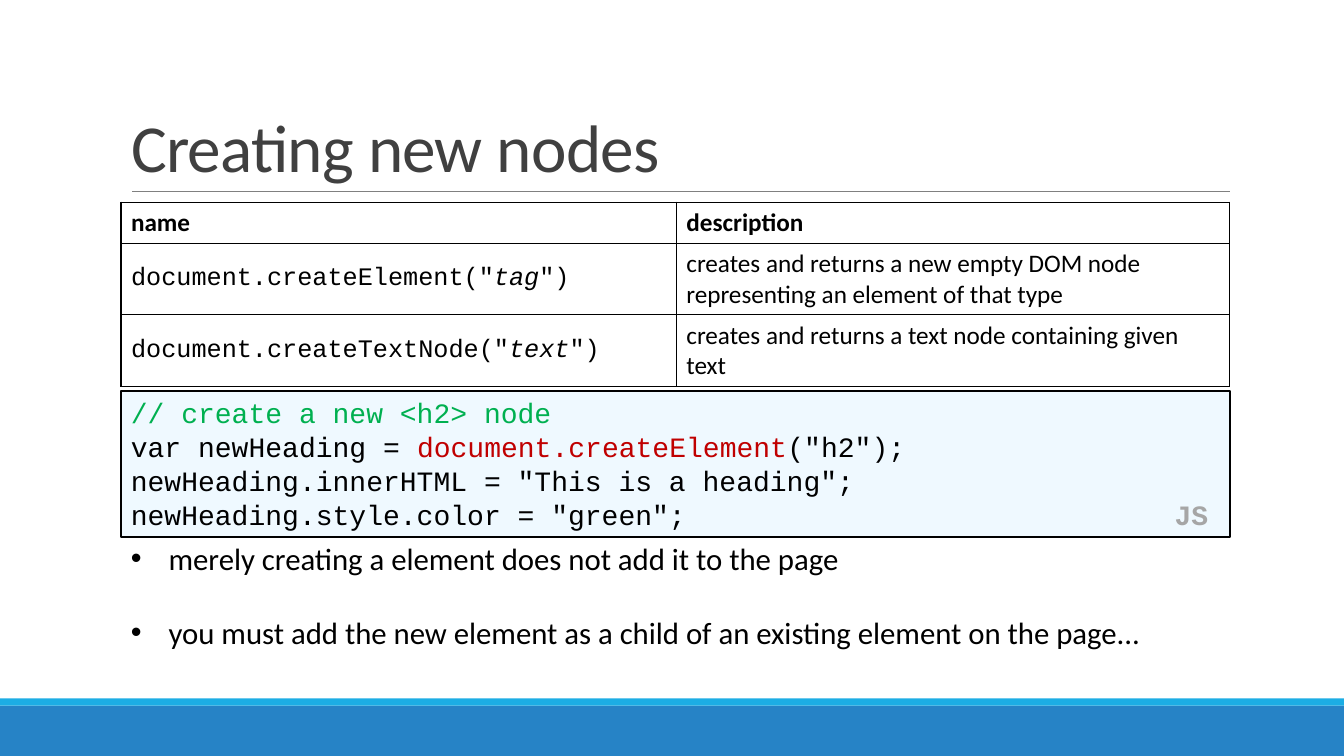
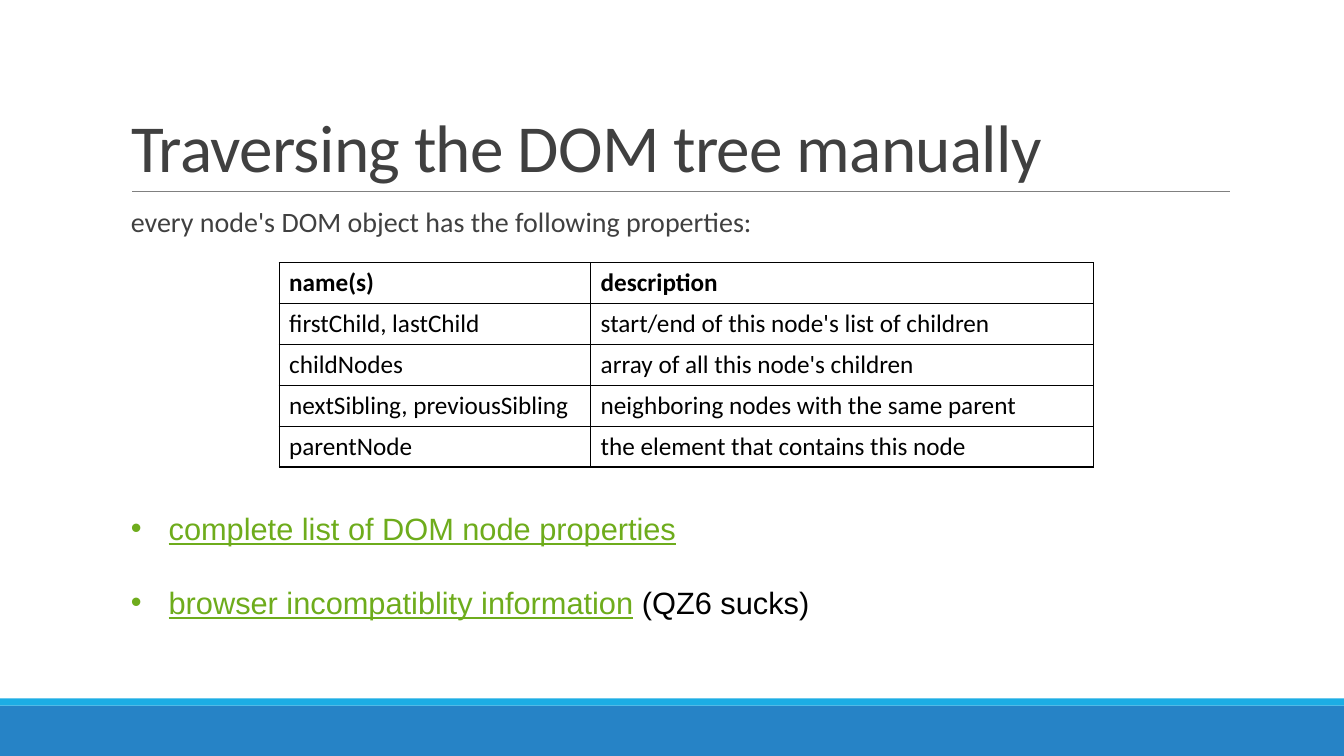
from lxml import etree
from pptx import Presentation
from pptx.dml.color import RGBColor
from pptx.enum.shapes import MSO_CONNECTOR as Connector, MSO_SHAPE as Shape
from pptx.enum.text import MSO_ANCHOR as Anchor, PP_ALIGN as Align
from pptx.oxml.ns import qn
from pptx.util import Pt

COLORS = {
    "band": "2683C6", "stripe": "1CADE4", "rule": "808080", "title": "404040",
    "ink": "000000", "code_fill": "EFF9FF", "comment": "00B050",
    "call": "C00000", "tag": "A6A6A6", "link": "6EAC1C",
}
SANS, MONO, ARIAL = "Calibri", "Courier New", "Arial"
SLIDE_W, SLIDE_H = 960, 540
LEFT, WIDTH = 86.4, 792
BAND_TOP, STRIPE_TOP, RULE_Y = 504, 498.8, 136.8

LINK = {"color": "link", "underline": True}
ITALIC = {"italic": True}

CREATE_TITLE = "Creating new nodes"
CREATE_ROWS = [
    ["name", "description"],
    [[("document.createElement(\"", {}), ("tag", ITALIC), ("\")", {})],
     "creates and returns a new empty DOM node representing an element of that type"],
    [[("document.createTextNode(\"", {}), ("text", ITALIC), ("\")", {})],
     "creates and returns a text node containing given text"],
]
CODE = [
    [("// create a new <h2> node", {"color": "comment"})],
    [("var newHeading = ", {}), ("document.createElement", {"color": "call"}),
     ("(\"h2\");", {})],
    "newHeading.innerHTML = \"This is a heading\";",
    [("newHeading.style.color = \"green\";\t", {}),
     ("JS", {"color": "tag", "bold": True})],
]
CREATE_NOTES = [
    "merely creating a element does not add it to the page",
    "you must add the new element as a child of an existing element on the page...",
]

TRAVERSE_TITLE = "Traversing the DOM tree manually"
TRAVERSE_LEAD = "every node's DOM object has the following properties:"
TRAVERSE_ROWS = [
    ["name(s)", "description"],
    ["firstChild, lastChild", "start/end of this node's list of children"],
    ["childNodes", "array of all this node's children"],
    ["nextSibling, previousSibling", "neighboring nodes with the same parent"],
    ["parentNode", "the element that contains this node"],
]
TRAVERSE_LINKS = [
    [("complete list of DOM node properties", LINK)],
    [("browser incompatiblity information", LINK), (" (QZ6 sucks)", {})],
]


def rgb(name):
    return RGBColor.from_string(COLORS[name])


def write(paragraph, content, *, size, font=SANS, color="ink", bold=False,
          spacing=None, line=None, before=0):
    paragraph.alignment = Align.LEFT
    paragraph.space_before = Pt(before)
    if line:
        paragraph.line_spacing = line
    runs = [(content, {})] if isinstance(content, str) else content
    for text, look in runs:
        run = paragraph.add_run()
        run.text = text
        run.font.name = font
        run.font.size = Pt(size)
        run.font.bold = look.get("bold", bold)
        run.font.italic = look.get("italic", False)
        run.font.underline = look.get("underline", False)
        run.font.color.rgb = rgb(look.get("color", color))
        if spacing is not None:
            run.font._element.set("spc", str(spacing))


def paragraphs(frame, count):
    for _ in range(count - 1):
        frame.add_paragraph()
    return frame.paragraphs


def add_rect(slide, left, top, width, height, fill):
    rect = slide.shapes.add_shape(
        Shape.RECTANGLE, Pt(left), Pt(top), Pt(width), Pt(height))
    rect.shadow.inherit = False
    rect.fill.solid()
    rect.fill.fore_color.rgb = rgb(fill)
    rect.line.fill.background()
    return rect


def add_text_frame(slide, top, height):
    frame = slide.shapes.add_textbox(
        Pt(LEFT), Pt(top), Pt(WIDTH), Pt(height)).text_frame
    frame.word_wrap = True
    return frame


def new_slide(deck, heading):
    slide = deck.slides.add_slide(deck.slide_layouts[5])
    add_rect(slide, 0, BAND_TOP, SLIDE_W, SLIDE_H - BAND_TOP, "band")
    add_rect(slide, 0, STRIPE_TOP, SLIDE_W, BAND_TOP - STRIPE_TOP, "stripe")
    rule = slide.shapes.add_connector(
        Connector.STRAIGHT, Pt(94.5), Pt(RULE_Y), Pt(878.8), Pt(RULE_Y))
    rule.line.color.rgb = rgb("rule")
    rule.line.width = Pt(0.5)
    etree.SubElement(rule._element.spPr, qn("a:effectLst"))
    title = slide.shapes.title
    title.left, title.top = Pt(LEFT), Pt(22.3)
    title.width, title.height = Pt(WIDTH), Pt(RULE_Y - 22.3)
    title.text_frame.word_wrap = True
    title.text_frame.vertical_anchor = Anchor.BOTTOM
    write(title.text_frame.paragraphs[0], heading, size=48, color="title",
          spacing=-50, line=0.85)
    return slide


def add_borders(cell):
    props = cell._tc.get_or_add_tcPr()
    for place, side in enumerate(("a:lnL", "a:lnR", "a:lnT", "a:lnB")):
        edge = etree.Element(qn(side), w=str(Pt(1)))
        fill = etree.SubElement(edge, qn("a:solidFill"))
        etree.SubElement(fill, qn("a:srgbClr"), val=COLORS["ink"])
        props.insert(place, edge)


def add_grid(slide, left, top, widths, heights, rows, name_font=SANS):
    table = slide.shapes.add_table(
        len(rows), len(widths), Pt(left), Pt(top),
        Pt(sum(widths)), Pt(sum(heights))).table
    for column, width in zip(table.columns, widths):
        column.width = Pt(width)
    for r, (row, height) in enumerate(zip(rows, heights)):
        table.rows[r].height = Pt(height)
        for c, content in enumerate(row):
            cell = table.cell(r, c)
            cell.fill.background()
            cell.vertical_anchor = Anchor.MIDDLE
            add_borders(cell)
            write(cell.text_frame.paragraphs[0], content, size=18,
                  font=name_font if r and not c else SANS, bold=r == 0)


def add_code(slide, top, height):
    box = add_rect(slide, LEFT, top, WIDTH, height, "code_fill")
    box.line.color.rgb = rgb("ink")
    box.line.width = Pt(1.5)
    frame = box.text_frame
    frame.word_wrap = True
    frame.vertical_anchor = Anchor.TOP
    frame.margin_top = Pt(2.9)
    for paragraph, content in zip(paragraphs(frame, len(CODE)), CODE):
        write(paragraph, content, size=20, font=MONO, line=Pt(24.2))
        tabs = etree.SubElement(paragraph._p.get_or_add_pPr(), qn("a:tabLst"))
        etree.SubElement(tabs, qn("a:tab"), pos=str(Pt(745.5)), algn="l")


def add_bullets(slide, top, items, gap, font=SANS):
    frame = add_text_frame(slide, top, 87)
    for i, (paragraph, content) in enumerate(
            zip(paragraphs(frame, len(items)), items)):
        write(paragraph, content, size=22, font=font, before=gap if i else 0)
        props = paragraph._p.get_or_add_pPr()
        props.set("marL", str(Pt(27)))
        props.set("indent", str(Pt(-27)))
        etree.SubElement(props, qn("a:buFont"), typeface=ARIAL)
        etree.SubElement(props, qn("a:buChar"), char="•")


def main():
    deck = Presentation()
    deck.slide_width, deck.slide_height = Pt(SLIDE_W), Pt(SLIDE_H)

    creating = new_slide(deck, CREATE_TITLE)
    add_grid(creating, LEFT, 144.5, [396.7, 395.3], [28.8, 51.2, 51.4],
             CREATE_ROWS, name_font=MONO)
    add_code(creating, 279.3, 104.4)
    add_bullets(creating, 382, CREATE_NOTES, gap=26.3)

    traversing = new_slide(deck, TRAVERSE_TITLE)
    lead = add_text_frame(traversing, 145.4, 34)
    write(lead.paragraphs[0], TRAVERSE_LEAD, size=20, color="title", line=0.9)
    add_grid(traversing, 199.4, 187.6, [222.5, 359.3],
             [29.2] * len(TRAVERSE_ROWS), TRAVERSE_ROWS)
    add_bullets(traversing, 360.5, TRAVERSE_LINKS, gap=26.5, font=ARIAL)

    deck.save("out.pptx")


if __name__ == "__main__":
    main()
